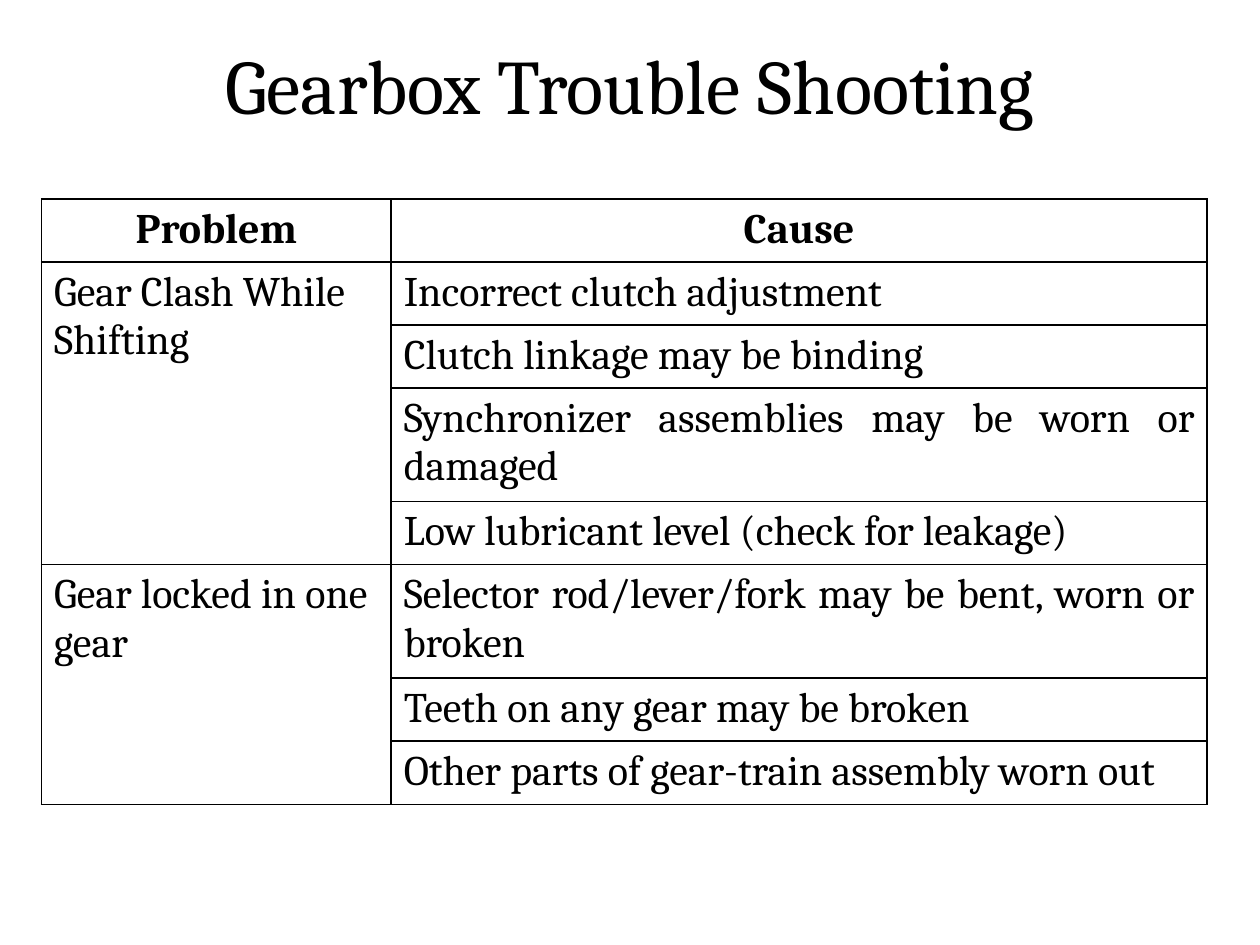
from lxml import etree
from pptx import Presentation
from pptx.dml.color import RGBColor
from pptx.enum.text import MSO_ANCHOR as Anchor, PP_ALIGN as Align
from pptx.oxml.ns import qn
from pptx.util import Inches, Pt

BLACK = RGBColor(0, 0, 0)
FONT = "Cambria"
BORDER_WIDTH = Pt(1)
COLUMN_SHARES = (0.3, 0.7)
HEADER_HEIGHT, LINE_HEIGHT, TWO_LINE_HEIGHT = 0.49, 0.48, 0.87
LINE_CAPACITY = 44  # characters that fit on one line of the cause column

HEADINGS = ("Problem", "Cause")
PROBLEMS = {
    "Gear Clash While Shifting": [
        "Incorrect clutch adjustment",
        "Clutch linkage may be binding",
        "Synchronizer assemblies may be worn or damaged",
        "Low lubricant level (check for leakage)",
    ],
    "Gear locked in one gear": [
        "Selector rod/lever/fork may be bent, worn or broken",
        "Teeth on any gear may be broken",
        "Other parts of gear-train assembly worn out",
    ],
}


def write_text(text_frame, text, size, align, bold=False):
    text_frame.text = text
    paragraph = text_frame.paragraphs[0]
    paragraph.alignment = align
    font = paragraph.runs[0].font
    font.name, font.size, font.bold = FONT, Pt(size), bold
    font.color.rgb = BLACK


def style_cell(cell):
    """Clear the cell's fill and draw a thin border on all four sides."""
    cell.fill.background()
    properties = cell._tc.get_or_add_tcPr()
    for position, side in enumerate(("a:lnL", "a:lnR", "a:lnT", "a:lnB")):
        line = etree.Element(qn(side), w=str(BORDER_WIDTH))
        fill = etree.SubElement(line, qn("a:solidFill"))
        etree.SubElement(fill, qn("a:srgbClr"), val=str(BLACK))
        properties.insert(position, line)


def add_title(slide, left, top, width, height):
    text_frame = slide.shapes.add_textbox(left, top, width, height).text_frame
    text_frame.word_wrap = True
    text_frame.vertical_anchor = Anchor.MIDDLE
    write_text(text_frame, "Gearbox Trouble Shooting", 44, Align.CENTER)


def add_problem_table(slide, left, top, width, height):
    row_count = 1 + sum(len(causes) for causes in PROBLEMS.values())
    table = slide.shapes.add_table(
        row_count, len(HEADINGS), left, top, width, height).table
    for column, share in zip(table.columns, COLUMN_SHARES):
        column.width = int(width * share)
    for cell in table.iter_cells():
        style_cell(cell)

    # Heading row
    table.rows[0].height = Inches(HEADER_HEIGHT)
    for column, heading in enumerate(HEADINGS):
        write_text(table.cell(0, column).text_frame, heading, 24,
                   Align.CENTER, bold=True)

    # One merged problem cell beside each group of causes
    row = 1
    for problem, causes in PROBLEMS.items():
        problem_cell = table.cell(row, 0)
        problem_cell.merge(table.cell(row + len(causes) - 1, 0))
        write_text(problem_cell.text_frame, problem, 24, Align.LEFT)
        for cause in causes:
            wraps = len(cause) > LINE_CAPACITY
            table.rows[row].height = Inches(
                TWO_LINE_HEIGHT if wraps else LINE_HEIGHT)
            write_text(table.cell(row, 1).text_frame, cause, 24, Align.JUSTIFY)
            row += 1


def main():
    presentation = Presentation()
    presentation.slide_width = Inches(10)
    presentation.slide_height = Inches(7.5)
    slide = presentation.slides.add_slide(presentation.slide_layouts[6])
    add_title(slide, Inches(0.5), Inches(0.25), Inches(9), Inches(0.83))
    add_problem_table(slide, Inches(0.33), Inches(1.58), Inches(9.25), Inches(4.65))
    presentation.save("out.pptx")


if __name__ == "__main__":
    main()
